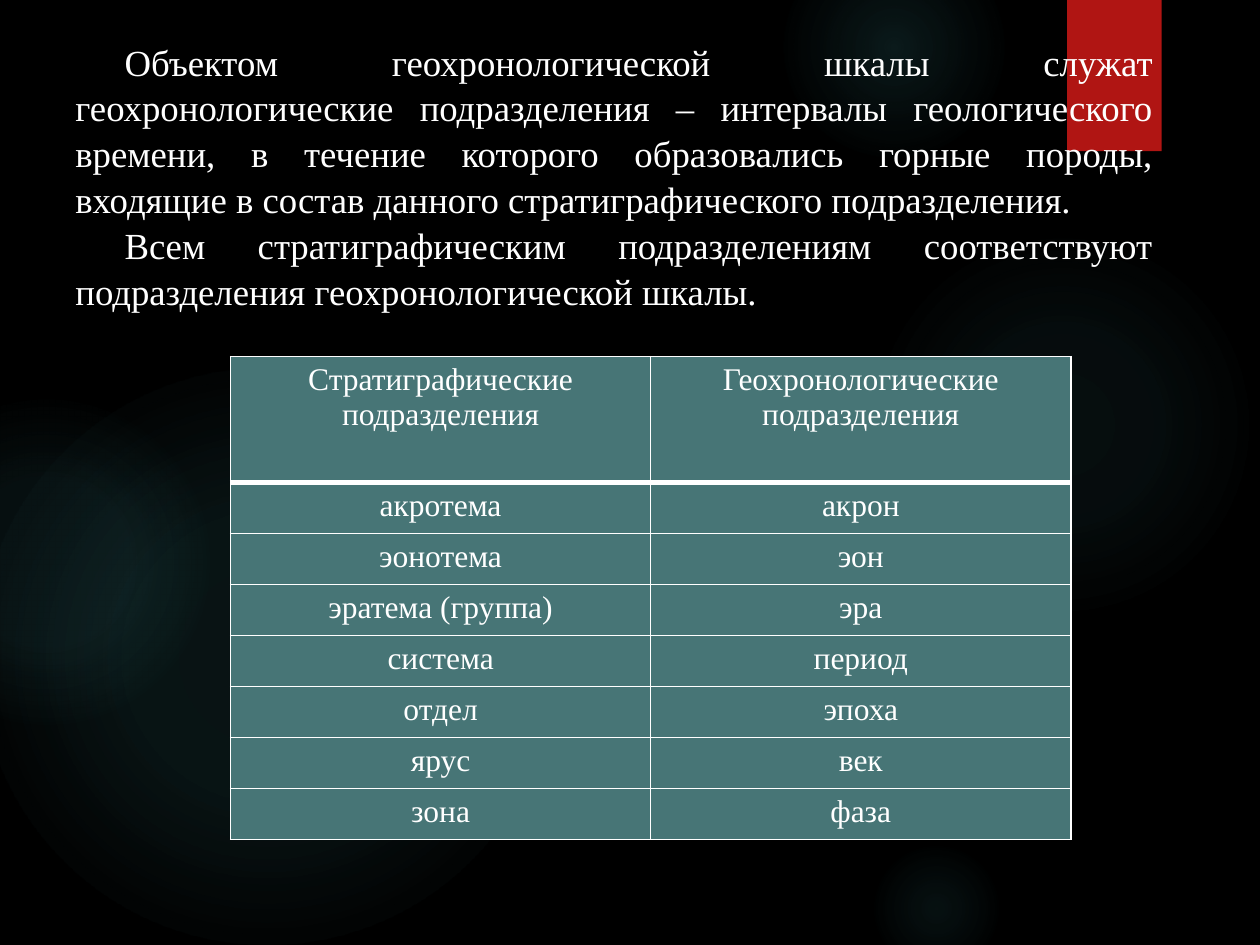
"""Build a slide that matches stratigraphic units with geochronological ones."""
from typing import NamedTuple

from lxml.etree import SubElement
from pptx import Presentation
from pptx.dml.color import RGBColor
from pptx.enum.shapes import MSO_SHAPE
from pptx.enum.text import PP_ALIGN
from pptx.oxml import parse_xml
from pptx.oxml.ns import nsdecls, qn
from pptx.util import Inches, Pt

FONT = "Times New Roman"
WHITE, BLACK, RED, TEAL, GLOW = "FFFFFF", "000000", "B01513", "477576", "50B9C1"


class Glow(NamedTuple):
    left: float
    top: float
    size: float
    centre_alpha: int
    middle_alpha: int
    edge: int


GLOWS = [
    Glow(6.89, 1.83, 3.08, 7, 6, 69),
    Glow(6.22, -0.5, 1.75, 14, 7, 73),
    Glow(6.89, 6.67, 1.08, 9, 5, 66),
    Glow(-0.17, 2.92, 4.58, 11, 10, 75),
    Glow(-0.92, 3.17, 2.58, 8, 8, 72),
]
PARAGRAPHS = [
    "Объектом геохронологической шкалы служат геохронологические подразделения – "
    "интервалы геологического времени, в течение которого образовались горные породы, "
    "входящие в состав данного стратиграфического подразделения.",
    "Всем стратиграфическим подразделениям соответствуют подразделения "
    "геохронологической шкалы.",
]
ROWS = [
    ("Стратиграфические подразделения", "Геохронологические подразделения"),
    ("акротема", "акрон"),
    ("эонотема", "эон"),
    ("эратема (группа)", "эра"),
    ("система", "период"),
    ("отдел", "эпоха"),
    ("ярус", "век"),
    ("зона", "фаза"),
]


def rgb(value: str) -> RGBColor:
    return RGBColor.from_string(value)


def style_paragraph(p, size: float, alignment) -> None:
    p.alignment = alignment
    p.font.name = FONT
    p.font.size = Pt(size)
    p.font.color.rgb = rgb(WHITE)


def add_shape(s, kind, left: float, top: float, width: float, height: float):
    shape = s.shapes.add_shape(
        kind, Inches(left), Inches(top), Inches(width), Inches(height))
    shape.shadow.inherit = False
    shape.line.fill.background()
    return shape


def add_glow(s, glow: Glow) -> None:
    sp = add_shape(s, MSO_SHAPE.OVAL, glow.left, glow.top, glow.size, glow.size)
    stops = [(0, glow.centre_alpha), (36, glow.middle_alpha), (glow.edge, 0)]
    stop_xml = "".join(
        f'<a:gs pos="{pos * 1000}"><a:srgbClr val="{GLOW}">'
        f'<a:alpha val="{alpha * 1000}"/></a:srgbClr></a:gs>'
        for pos, alpha in stops)
    gradient = parse_xml(
        f'<a:gradFill {nsdecls("a")} rotWithShape="1"><a:gsLst>{stop_xml}</a:gsLst>'
        '<a:path path="circle"><a:fillToRect l="50000" t="50000" r="50000" b="50000"/>'
        '</a:path></a:gradFill>')
    sp._element.spPr.find(qn("a:prstGeom")).addnext(gradient)


def add_intro(s) -> None:
    sp = s.shapes.add_textbox(Inches(0.5), Inches(0.25), Inches(8.75), Inches(2.83))
    tf = sp.text_frame
    tf.word_wrap = True
    tf.text = "\n".join(PARAGRAPHS)
    for p in tf.paragraphs:
        style_paragraph(p, 21, PP_ALIGN.JUSTIFY)
        p.line_spacing = 1.04
        p._p.get_or_add_pPr().set("indent", str(Inches(0.39)))


def add_borders(cell, bottom: float) -> None:
    tc_pr = cell._tc.get_or_add_tcPr()
    for side, width in {"lnL": 1, "lnR": 1, "lnT": 1, "lnB": bottom}.items():
        line = SubElement(tc_pr, qn(f"a:{side}"), w=str(Pt(width)))
        fill = SubElement(line, qn("a:solidFill"))
        SubElement(fill, qn("a:srgbClr"), val=WHITE)


def add_units_table(s) -> None:
    header_height, row_height = 1.0, 0.405
    height = header_height + row_height * (len(ROWS) - 1)
    table = s.shapes.add_table(
        len(ROWS), 2, Inches(1.83), Inches(2.83), Inches(6.67), Inches(height)).table
    for i, row in enumerate(ROWS):
        table.rows[i].height = Inches(row_height if i else header_height)
        for j, text in enumerate(row):
            cell = table.cell(i, j)
            add_borders(cell, 1 if i else 3)
            if i == 1:
                cell._tc.tcPr.find(qn("a:lnT")).set("w", str(Pt(3)))
            cell.fill.solid()
            cell.fill.fore_color.rgb = rgb(TEAL)
            cell.text = text
            p = cell.text_frame.paragraphs[0]
            style_paragraph(p, 18, PP_ALIGN.CENTER)
            p.font.bold = False


def main() -> None:
    prs = Presentation()
    prs.slide_width, prs.slide_height = Inches(10), Inches(7.5)
    s = prs.slides.add_slide(prs.slide_layouts[6])
    s.background.fill.solid()
    s.background.fill.fore_color.rgb = rgb(BLACK)
    for glow in GLOWS:
        add_glow(s, glow)
    ribbon = add_shape(s, MSO_SHAPE.RECTANGLE, 8.47, 0, 0.75, 1.2)
    ribbon.fill.solid()
    ribbon.fill.fore_color.rgb = rgb(RED)
    add_intro(s)
    add_units_table(s)
    prs.save("out.pptx")


if __name__ == "__main__":
    main()
